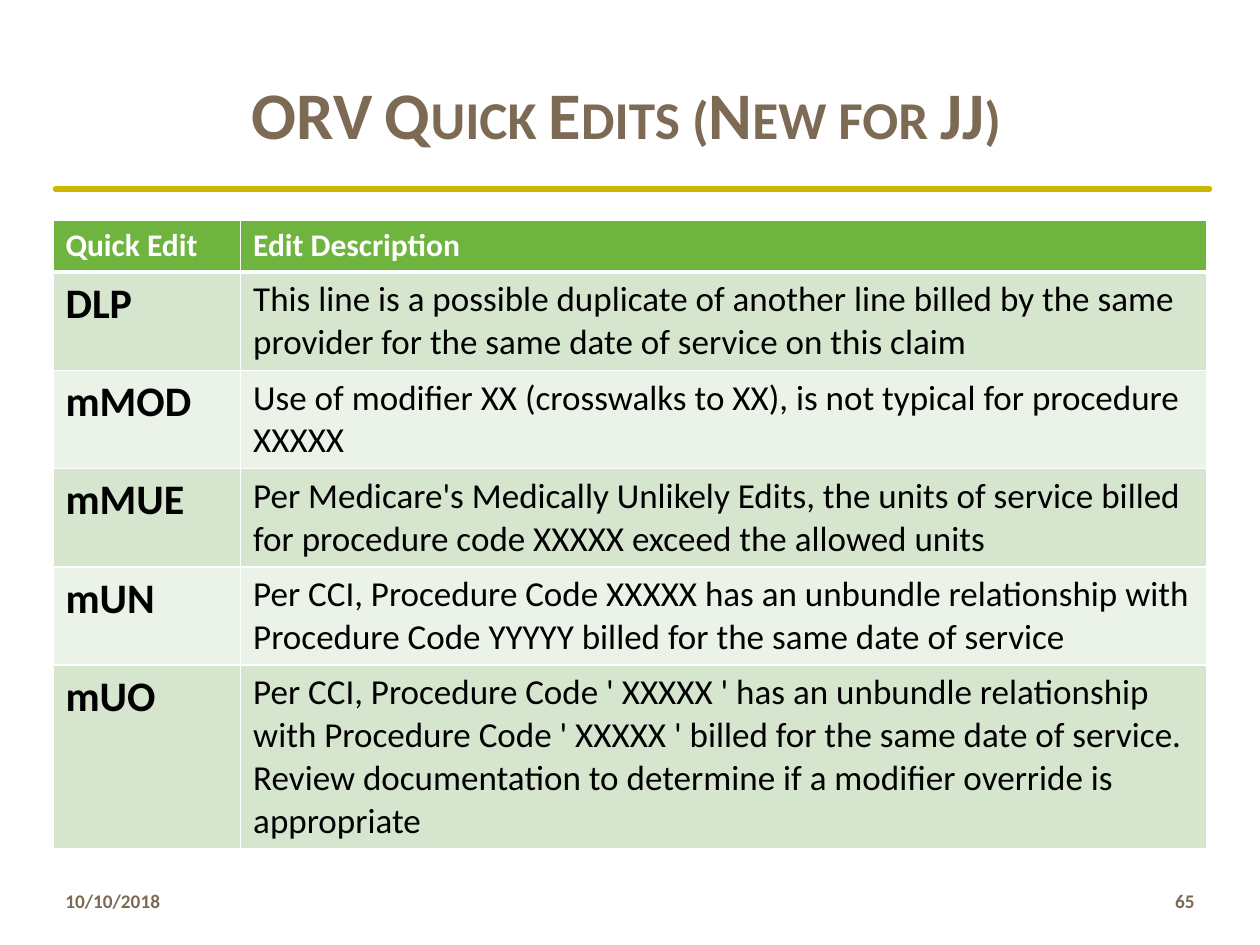
from lxml import etree
from pptx import Presentation
from pptx.dml.color import RGBColor
from pptx.enum.shapes import MSO_CONNECTOR
from pptx.enum.text import MSO_ANCHOR, PP_ALIGN
from pptx.oxml.ns import qn
from pptx.util import Inches, Pt

LEFT, RIGHT = PP_ALIGN.LEFT, PP_ALIGN.RIGHT
CENTER = PP_ALIGN.CENTER
MIDDLE = MSO_ANCHOR.MIDDLE
STRAIGHT = MSO_CONNECTOR.STRAIGHT

FONT = "Calibri"
BROWN = RGBColor(0x7C, 0x6A, 0x55)
GOLD = RGBColor(0xCA, 0xB9, 0x00)
GREEN = RGBColor(0x6F, 0xB4, 0x3E)
DARK = RGBColor(0xD5, 0xE5, 0xCE)
LIGHT = RGBColor(0xEB, 0xF2, 0xE8)
WHITE = RGBColor(0xFF, 0xFF, 0xFF)
BLACK = RGBColor(0x00, 0x00, 0x00)

HEADS = ("Quick Edit", "Edit Description")
EDITS = [
    ("DLP", "This line is a possible duplicate of another line billed by the "
            "same provider for the same date of service on this claim"),
    ("mMOD", "Use of modifier XX (crosswalks to XX), is not typical for "
             "procedure XXXXX"),
    ("mMUE", "Per Medicare's Medically Unlikely Edits, the units of service "
             "billed for procedure code XXXXX exceed the allowed units"),
    ("mUN", "Per CCI, Procedure Code XXXXX has an unbundle relationship with "
            "Procedure Code YYYYY billed for the same date of service"),
    ("mUO", "Per CCI, Procedure Code ' XXXXX ' has an unbundle relationship "
            "with Procedure Code ' XXXXX ' billed for the same date of "
            "service. Review documentation to determine if a modifier "
            "override is appropriate"),
]
COLS = (1.49, 7.67)
ROWS = (0.41, 0.78, 0.78, 0.78, 0.78, 1.46)


def write(frame, text, size=11, color=BROWN, bold=True, align=LEFT,
          space=None, caps=False):
    """Put one formatted paragraph into a text frame."""
    frame.word_wrap = True
    para = frame.paragraphs[0]
    para.alignment = align
    if space:
        para.line_spacing = space
    run = para.add_run()
    run.text = text
    font = run.font
    font.name, font.size, font.bold = FONT, Pt(size), bold
    font.color.rgb = color
    if caps:
        run._r.get_or_add_rPr().set("cap", "small")


def add_text(slide, text, x, y, w, h, **style):
    box = slide.shapes.add_textbox(Inches(x), Inches(y), Inches(w), Inches(h))
    box.text_frame.vertical_anchor = MIDDLE
    write(box.text_frame, text, **style)


def add_rule(slide, x, y, end):
    rule = slide.shapes.add_connector(
        STRAIGHT, Inches(x), Inches(y), Inches(end), Inches(y))
    rule.line.color.rgb = GOLD
    rule.line.width = Pt(3)
    props = rule._element.spPr
    props.find(qn("a:ln")).set("cap", "rnd")
    etree.SubElement(props, qn("a:effectLst"))


def add_edge(cell, side, width):
    props = cell._tc.get_or_add_tcPr()
    edge = etree.SubElement(props, qn(f"a:ln{side}"), w=str(Pt(width)))
    fill = etree.SubElement(edge, qn("a:solidFill"))
    etree.SubElement(fill, qn("a:srgbClr"), val=str(WHITE))


def fill_cell(cell, text, fill, edges, **style):
    # Borders come before the fill in the cell properties
    for side, width in edges.items():
        add_edge(cell, side, width)
    cell.fill.solid()
    cell.fill.fore_color.rgb = fill
    write(cell.text_frame, text, **style)


def add_grid(slide, x, y):
    table = slide.shapes.add_table(
        len(ROWS), len(COLS), Inches(x), Inches(y),
        Inches(sum(COLS)), Inches(sum(ROWS))).table
    for col, width in zip(table.columns, COLS):
        col.width = Inches(width)
    for row, height in zip(table.rows, ROWS):
        row.height = Inches(height)

    # Header row, with a thick line below it
    for col, text in enumerate(HEADS):
        fill_cell(table.cell(0, col), text, GREEN,
                  dict(L=1, R=1, T=1, B=3), size=18, color=WHITE)

    # Banded rows: bold code, plain description
    for row, (code, note) in enumerate(EDITS, 1):
        fill = DARK if row % 2 else LIGHT
        edges = dict(L=1, R=1, T=3 if row == 1 else 1, B=1)
        fill_cell(table.cell(row, 0), code, fill, edges,
                  size=24, color=BLACK)
        fill_cell(table.cell(row, 1), note, fill, edges,
                  size=20, color=BLACK, bold=False)


def main():
    deck = Presentation()
    deck.slide_width, deck.slide_height = Inches(10), Inches(7.5)
    slide = deck.slides.add_slide(deck.slide_layouts[6])

    # Title and rule
    add_rule(slide, 0.44, 1.5, 9.6)
    add_text(slide, "ORV Quick Edits (New for JJ) ", 0.44, 0.3, 9.16, 1.25,
             size=38, align=CENTER, space=0.95, caps=True)

    # Table of edits
    add_grid(slide, 0.42, 1.75)

    # Footer
    add_text(slide, "10/10/2018", 0.42, 6.95, 2.25, 0.4)
    add_text(slide, "65", 7.25, 6.95, 2.33, 0.4, align=RIGHT)

    deck.save("out.pptx")


if __name__ == "__main__":
    main()
